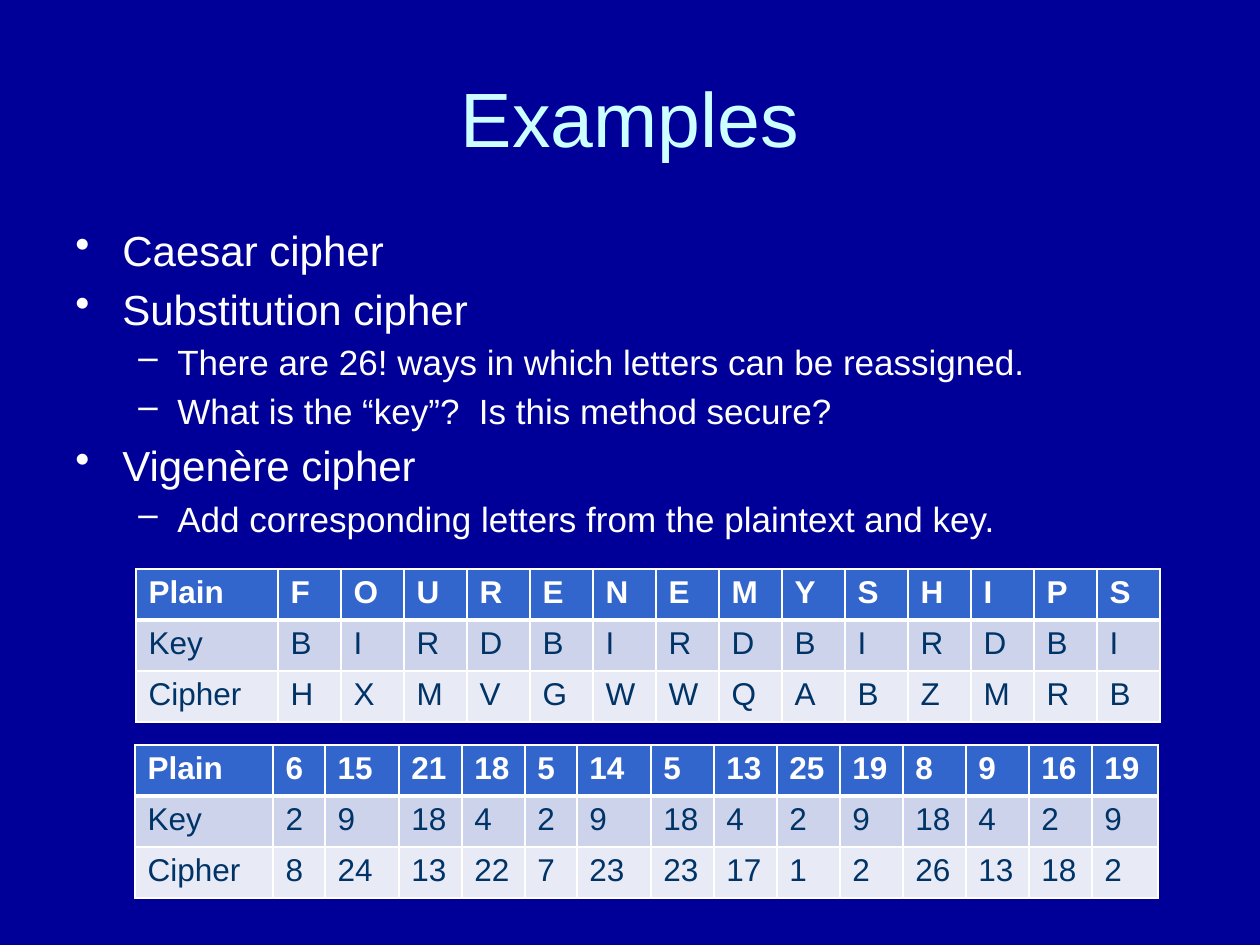
from lxml.etree import SubElement
from pptx import Presentation
from pptx.dml.color import RGBColor
from pptx.enum.text import MSO_ANCHOR, PP_ALIGN
from pptx.oxml.ns import qn
from pptx.util import Emu, Pt

# Content
TITLE = "Examples"
BULLETS = [  # level, text
    (0, "Caesar cipher"),
    (0, "Substitution cipher"),
    (1, "There are 26! ways in which letters can be reassigned."),
    (1, "What is the “key”?  Is this method secure?"),
    (0, "Vigenère cipher"),
    (1, "Add corresponding letters from the plaintext and key."),
]
MESSAGE = [("Plain", "FOURENEMYSHIPS"),
           ("Key", "BIRDBIRDBIRDBI"),
           ("Cipher", "HXMVGWWQABZMRB")]
LETTERS = [[name, *word] for name, word in MESSAGE]
NUMBERS = [[name, *(str(ord(ch) - ord("A") + 1) for ch in word)]
           for name, word in MESSAGE]

# Geometry in px: left, top, column widths
TABLES = [
    (LETTERS, 136, 569, [142] + [63] * 14),
    (NUMBERS, 135, 745, [138] + [52, 74, 63, 63] + [52, 74] + [63] * 7 + [66]),
]
ROW_H = 51

# Style
FONT = "Arial"
LEVELS = [  # size, bullet, text indent px, hanging px
    (24, "•", 47, 47),
    (20, "–", 102, 39),
]
ROW_STYLES = [  # fill, text colour, bold
    ("3366CC", "FFFFFF", True),
    ("CED3EC", "003366", False),
    ("E8EAF6", "003366", False),
]


def px(n):
    return Emu(round(n * 914400 / 126))


def rgb(color):
    return RGBColor.from_string(color)


def write(p, text, size=18, color="FFFFFF", bold=False):
    r = p.add_run()
    r.text = text
    r.font.name, r.font.size, r.font.bold = FONT, Pt(size), bold
    r.font.color.rgb = rgb(color)


def set_bullet(p, level):
    _, char, indent, hanging = LEVELS[level]
    p.level = level
    pPr = p._p.get_or_add_pPr()
    pPr.set("marL", str(px(indent)))
    pPr.set("indent", str(-px(hanging)))
    before = SubElement(pPr, qn("a:spcBef"))
    SubElement(before, qn("a:spcPct"), val="20000")
    SubElement(pPr, qn("a:buChar"), char=char)


def set_borders(cell, **widths):
    tcPr = cell._tc.get_or_add_tcPr()
    for side, width in widths.items():
        ln = SubElement(tcPr, qn(f"a:ln{side}"), w=str(Pt(width)))
        fill = SubElement(ln, qn("a:solidFill"))
        SubElement(fill, qn("a:srgbClr"), val="FFFFFF")


def add_cipher_table(slide, rows, left, top, widths):
    frame = slide.shapes.add_table(len(rows), len(widths), px(left), px(top),
                                   px(sum(widths)), px(ROW_H * len(rows)))
    table = frame.table
    for column, width in zip(table.columns, widths):
        column.width = px(width)
    for i, (row, (fill, color, bold)) in enumerate(zip(rows, ROW_STYLES)):
        table.rows[i].height = px(ROW_H)
        for j, text in enumerate(row):
            cell = table.cell(i, j)
            write(cell.text_frame.paragraphs[0], text, color=color, bold=bold)
            set_borders(cell, L=1, R=1, T=3 if i == 1 else 1, B=3 if i == 0 else 1)
            cell.fill.solid()
            cell.fill.fore_color.rgb = rgb(fill)


prs = Presentation()
prs.slide_width, prs.slide_height = px(1260), px(945)
slide = prs.slides.add_slide(prs.slide_layouts[5])
slide.background.fill.solid()
slide.background.fill.fore_color.rgb = rgb("000099")

# Title
title = slide.shapes.title
title.left, title.top, title.width, title.height = px(63), px(38), px(1134), px(158)
title.text_frame.vertical_anchor = MSO_ANCHOR.MIDDLE
p = title.text_frame.paragraphs[0]
p.alignment = PP_ALIGN.CENTER
write(p, TITLE, size=44, color="CCFFFF")

# Bullet list
tf = slide.shapes.add_textbox(px(63), px(218), px(1134), px(624)).text_frame
tf.word_wrap = True
for i, (level, text) in enumerate(BULLETS):
    p = tf.add_paragraph() if i else tf.paragraphs[0]
    set_bullet(p, level)
    write(p, text, size=LEVELS[level][0])

# Tables of letters and of their positions in the alphabet
for spec in TABLES:
    add_cipher_table(slide, *spec)

prs.save("out.pptx")
